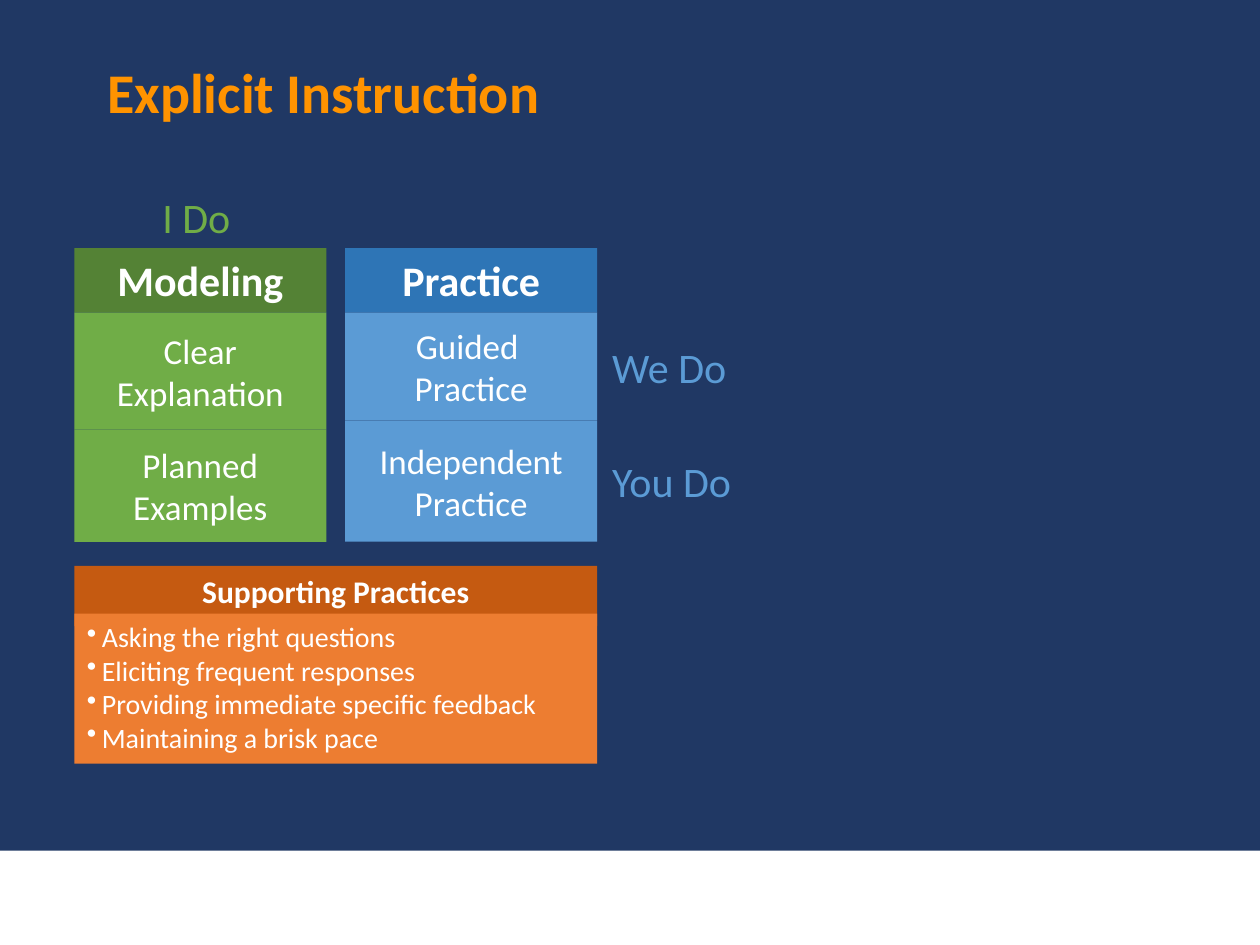
import pptx
import pptx.dml.color
import pptx.enum.shapes
import pptx.enum.text
import pptx.oxml
import pptx.oxml.ns
import pptx.util

Inches = pptx.util.Inches
Align = pptx.enum.text.PP_ALIGN
Anchor = pptx.enum.text.MSO_ANCHOR

NAVY, WHITE, ORANGE = "203864", "FFFFFF", "FF9300"
GREEN, BLUE = "70AD47", "5B9BD5"


def rgb(hex_code):
    return pptx.dml.color.RGBColor.from_string(hex_code)


class SlideStyle:
    """Holds the current slide and draws its elements in one style."""

    font_name = "Calibri"

    def __init__(self, slide):
        self.slide = slide

    def background(self, color):
        fill = self.slide.background.fill
        fill.solid()
        fill.fore_color.rgb = rgb(color)

    def set_lines(self, frame, lines, size, color, bold=False, align=Align.LEFT, bullet=None):
        for index, line in enumerate(lines):
            paragraph = frame.add_paragraph() if index else frame.paragraphs[0]
            paragraph.text = line
            paragraph.alignment = align
            if bullet:
                self.add_bullet(paragraph, bullet)
            paragraph.font.name = self.font_name
            paragraph.font.size = pptx.util.Pt(size)
            paragraph.font.bold = bold
            paragraph.font.color.rgb = rgb(color)

    def add_bullet(self, paragraph, bullet):
        indent = Inches(0.12)
        properties = paragraph._p.get_or_add_pPr()
        properties.set("marL", str(indent))
        properties.set("indent", str(-indent))
        namespace = pptx.oxml.ns.nsdecls("a")
        properties.append(pptx.oxml.parse_xml(f'<a:buChar {namespace} char="{bullet}"/>'))

    def title(self, text, left, top, width, height):
        heading = self.slide.shapes.title
        heading.left, heading.top = Inches(left), Inches(top)
        heading.width, heading.height = Inches(width), Inches(height)
        heading.fill.solid()
        heading.fill.fore_color.rgb = rgb(NAVY)
        heading.text_frame.vertical_anchor = Anchor.TOP
        self.set_lines(heading.text_frame, [text], 32, ORANGE, bold=True)
        heading.text_frame.paragraphs[0].line_spacing = 1.1

    def block(self, left, top, width, height, color, lines=(), size=20, bold=False,
              align=Align.CENTER, anchor=Anchor.MIDDLE, bullet=None):
        block = self.slide.shapes.add_shape(
            pptx.enum.shapes.MSO_SHAPE.RECTANGLE,
            Inches(left), Inches(top), Inches(width), Inches(height))
        block.shadow.inherit = False
        block.fill.solid()
        block.fill.fore_color.rgb = rgb(color)
        block.line.fill.background()
        block.text_frame.word_wrap = True
        block.text_frame.vertical_anchor = anchor
        self.set_lines(block.text_frame, lines, size, WHITE, bold, align, bullet)

    def label(self, text, left, top, width, color, wrap=True):
        label = self.slide.shapes.add_textbox(
            Inches(left), Inches(top), Inches(width), Inches(0.5))
        label.text_frame.word_wrap = wrap
        label.text_frame.auto_size = pptx.enum.text.MSO_AUTO_SIZE.SHAPE_TO_FIT_TEXT
        self.set_lines(label.text_frame, [text], 24, color)


def main():
    deck = pptx.Presentation()
    deck.slide_width, deck.slide_height = Inches(10), Inches(7.5)
    style = SlideStyle(deck.slides.add_slide(deck.slide_layouts[5]))
    style.background(NAVY)
    style.title("Explicit Instruction", 0.75, 0.35, 8.99, 0.93)
    style.block(0, 6.75, 10, 0.75, WHITE)

    body_top, body_bottom, column_width = 2.48, 4.3, 2
    columns = [
        (0.59, "Modeling", "548235", GREEN, 3.41,
         ["Clear Explanation"], ["Planned", "Examples"]),
        (2.74, "Practice", "2E75B6", BLUE, 3.34,
         ["Guided ", "Practice"], ["Independent Practice"]),
    ]
    for left, heading, dark, light, split, first, second in columns:
        style.block(left, split, column_width, body_bottom - split, light, second)
        style.block(left, body_top, column_width, split - body_top, light, first)
        style.block(left, 1.97, column_width, body_top - 1.97, dark, [heading],
                    size=24, bold=True, anchor=Anchor.TOP)

    style.label("I Do", 1.19, 1.47, 0.75, GREEN, wrap=False)
    style.label("We Do", 4.76, 2.66, 2, BLUE)
    style.label("You Do", 4.76, 3.57, 1.75, BLUE)

    style.block(0.59, 4.49, 4.15, 0.48, "C55A11", ["Supporting Practices"],
                size=18, bold=True, anchor=Anchor.TOP)
    supporting_practices = [
        "Asking the right questions",
        "Eliciting frequent responses",
        "Providing immediate specific feedback",
        "Maintaining a brisk pace",
    ]
    style.block(0.59, 4.87, 4.15, 1.19, "ED7D31", supporting_practices,
                size=16, align=Align.LEFT, anchor=Anchor.TOP, bullet="•")
    deck.save("out.pptx")


if __name__ == "__main__":
    main()
